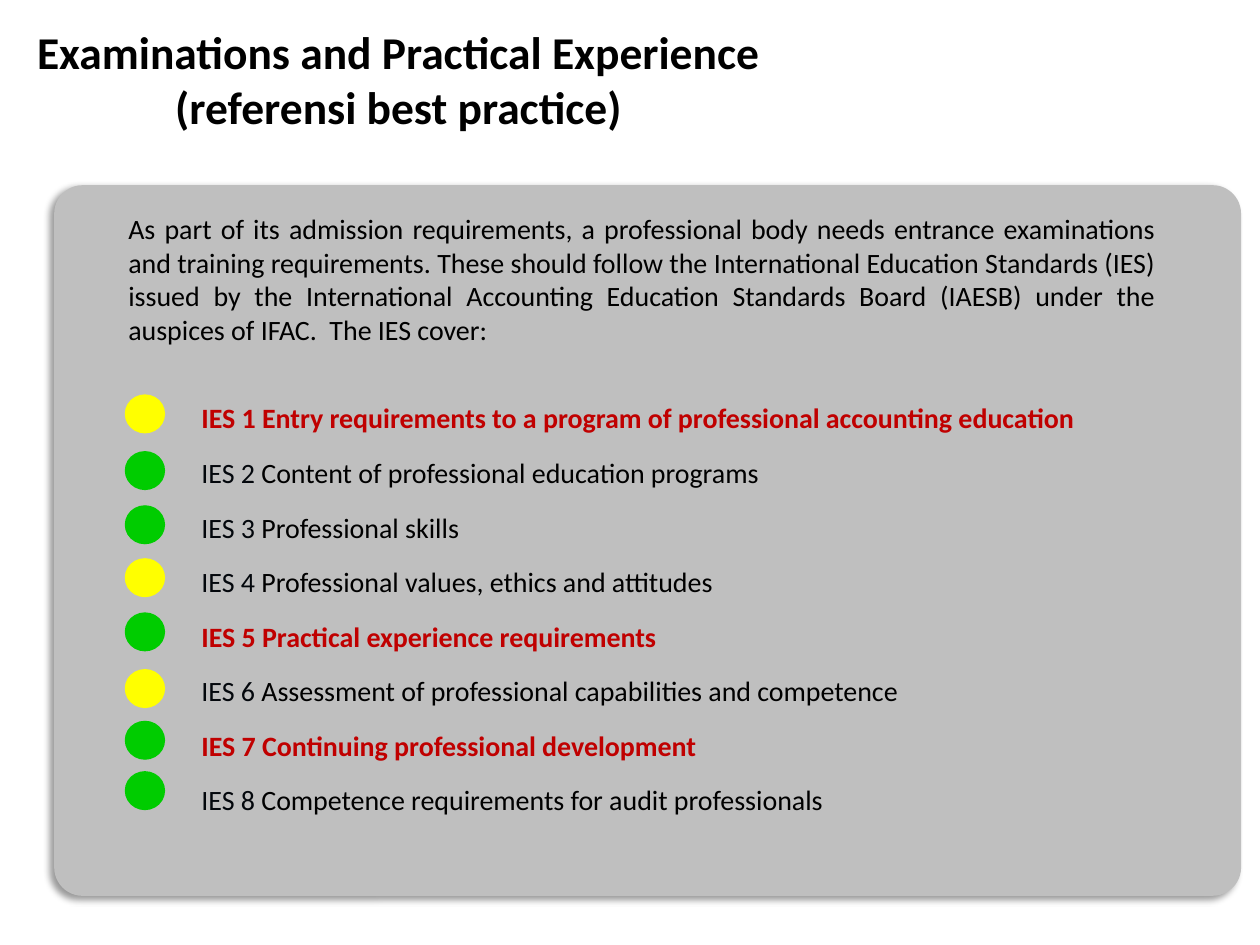
from lxml.etree import SubElement
from pptx import Presentation
from pptx.dml.color import RGBColor as RGB
from pptx.enum.shapes import MSO_SHAPE as Shape
from pptx.enum.text import MSO_ANCHOR as Anchor, PP_ALIGN as Align
from pptx.oxml.ns import qn
from pptx.util import Inches, Pt

TITLE = "Examinations and Practical Experience\v(referensi best practice)"
INTRO = (
    "As part of its admission requirements, a professional body needs entrance "
    "examinations and training requirements. These should follow the International "
    "Education Standards (IES) issued by the International Accounting Education "
    "Standards Board (IAESB) under the auspices of IFAC.  The IES cover:"
)
BLACK, INK, RED, GREY = "000000", "03070C", "C00000", "BFBFBF"
YELLOW, GREEN = "FFFF00", "00CC00"
ITEMS = [
    ("Entry requirements to a program of professional accounting education", True, YELLOW, 3.13),
    ("Content of professional education programs", False, GREEN, 3.58),
    ("Professional skills", False, GREEN, 4.01),
    ("Professional values, ethics and attitudes", False, YELLOW, 4.43),
    ("Practical experience requirements", True, GREEN, 4.86),
    ("Assessment of professional capabilities and competence", False, YELLOW, 5.31),
    ("Continuing professional development", True, GREEN, 5.72),
    ("Competence requirements for audit professionals", False, GREEN, 6.12),
]


def paint(part, color):
    """Set the colour of a font or a solid fill."""
    target = part.color if hasattr(part, "color") else part.fore_color
    target.rgb = RGB.from_string(color)


def add_shape(slide, kind, box, color):
    """Add a filled shape with no line or shadow."""
    shape = slide.shapes.add_shape(kind, *map(Inches, box))
    shape.shadow.inherit = False
    shape.fill.solid()
    paint(shape.fill, color)
    shape.line.fill.background()
    return shape


def add_shadow(shape):
    """Give a shape a soft shadow to the lower left."""
    effects = shape._element.spPr.find(qn("a:effectLst"))
    outer = SubElement(effects, qn("a:outerShdw"), blurRad=str(Pt(4)),
                       dist=str(Pt(3)), dir=str(135 * 60000),
                       algn="tr", rotWithShape="0")
    tint = SubElement(outer, qn("a:srgbClr"), val=BLACK)
    SubElement(tint, qn("a:alpha"), val="40000")


def add_box(slide, box):
    """Add a wrapping text box and return its frame."""
    frame = slide.shapes.add_textbox(*map(Inches, box)).text_frame
    frame.word_wrap = True
    return frame


def style(font, size, color, bold=False):
    """Set the font of a paragraph or run."""
    font.name, font.size, font.bold = "Calibri", Pt(size), bold
    paint(font, color)


def add_item(frame, number, text, key):
    """Add one indented standard to the list."""
    para = frame.add_paragraph()
    para._p.get_or_add_pPr().set("marL", str(Inches(0.58)))
    para.alignment = Align.LEFT
    para.space_after = Pt(12)
    for words, color in ((f"IES {number} ", INK), (text, BLACK)):
        run = para.add_run()
        run.text = words
        style(run.font, 16, RED if key else color, key)


def main():
    """Build and save the slide."""
    deck = Presentation()
    deck.slide_width, deck.slide_height = Inches(10), Inches(7.5)
    slide = deck.slides.add_slide(deck.slide_layouts[6])

    head = add_box(slide, (0, 0, 6.33, 1.25))
    head.vertical_anchor = Anchor.MIDDLE
    head.text = TITLE
    title = head.paragraphs[0]
    title.alignment = Align.CENTER
    style(title.font, 26, BLACK, True)
    for run in title.runs:
        style(run.font, 26, BLACK, True)

    panel = add_shape(slide, Shape.ROUNDED_RECTANGLE, (0.43, 1.47, 9.42, 5.64), GREY)
    panel.adjustments[0] = 0.04
    add_shadow(panel)

    body = add_box(slide, (0.92, 1.63, 8.35, 4.95))
    body.text = INTRO
    intro = body.paragraphs[0]
    intro.alignment = Align.JUSTIFY
    intro.space_after = Pt(31.5)
    style(intro.runs[0].font, 16, BLACK)

    for number, (text, key, light, top) in enumerate(ITEMS, 1):
        add_item(body, number, text, key)
        add_shape(slide, Shape.OVAL, (0.99, top, 0.32, 0.31), light)

    deck.save("out.pptx")


if __name__ == "__main__":
    main()
